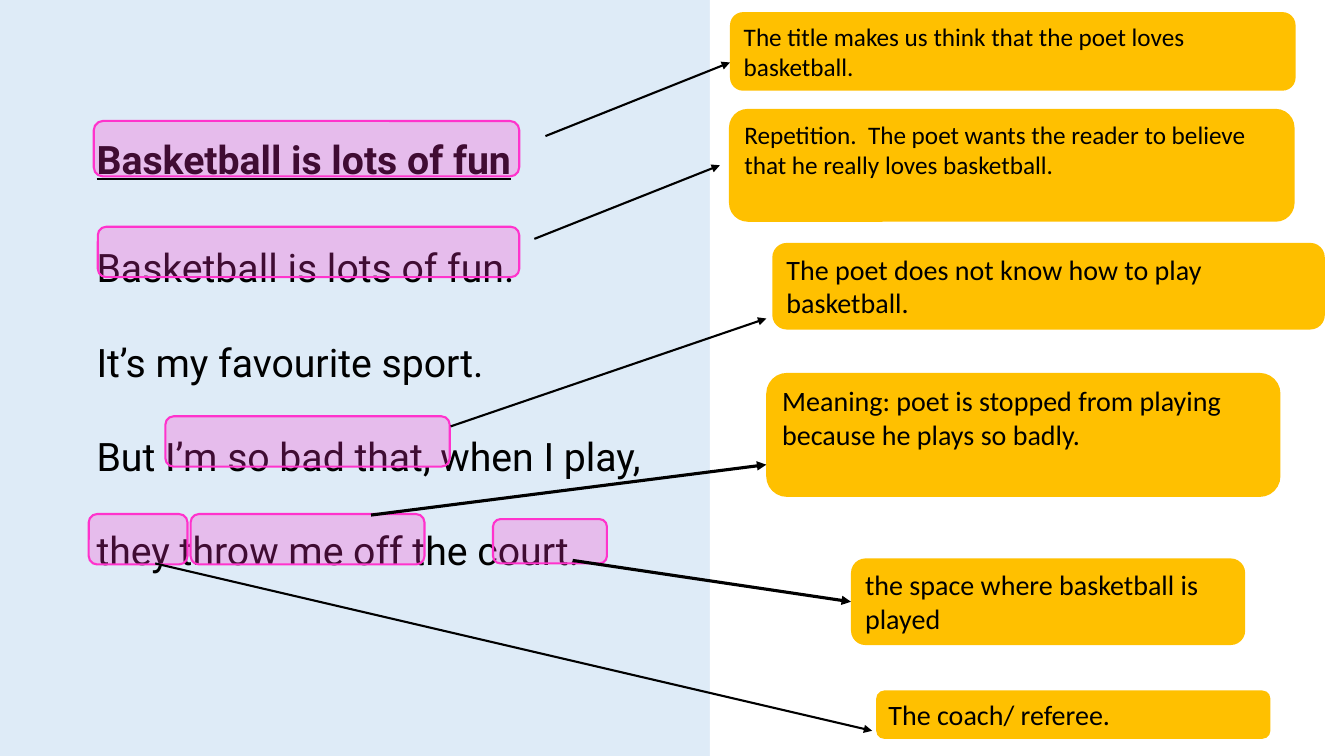
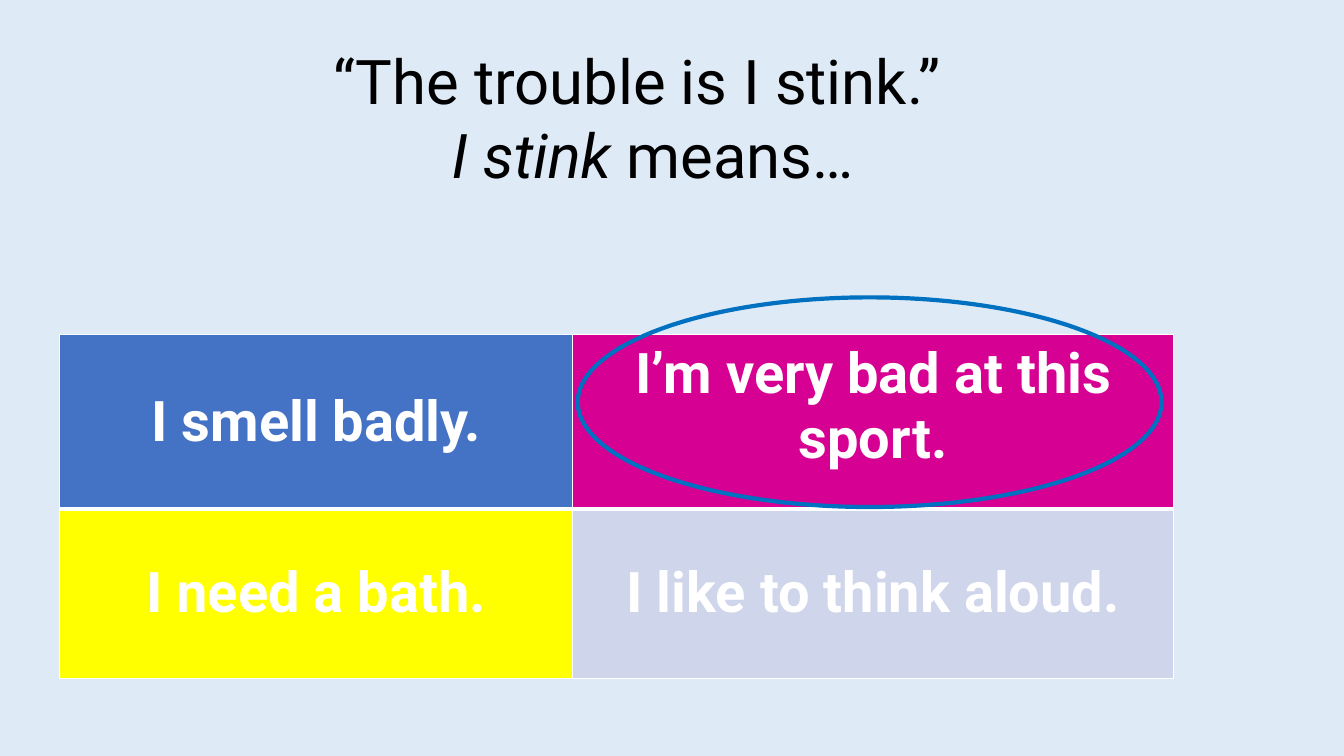
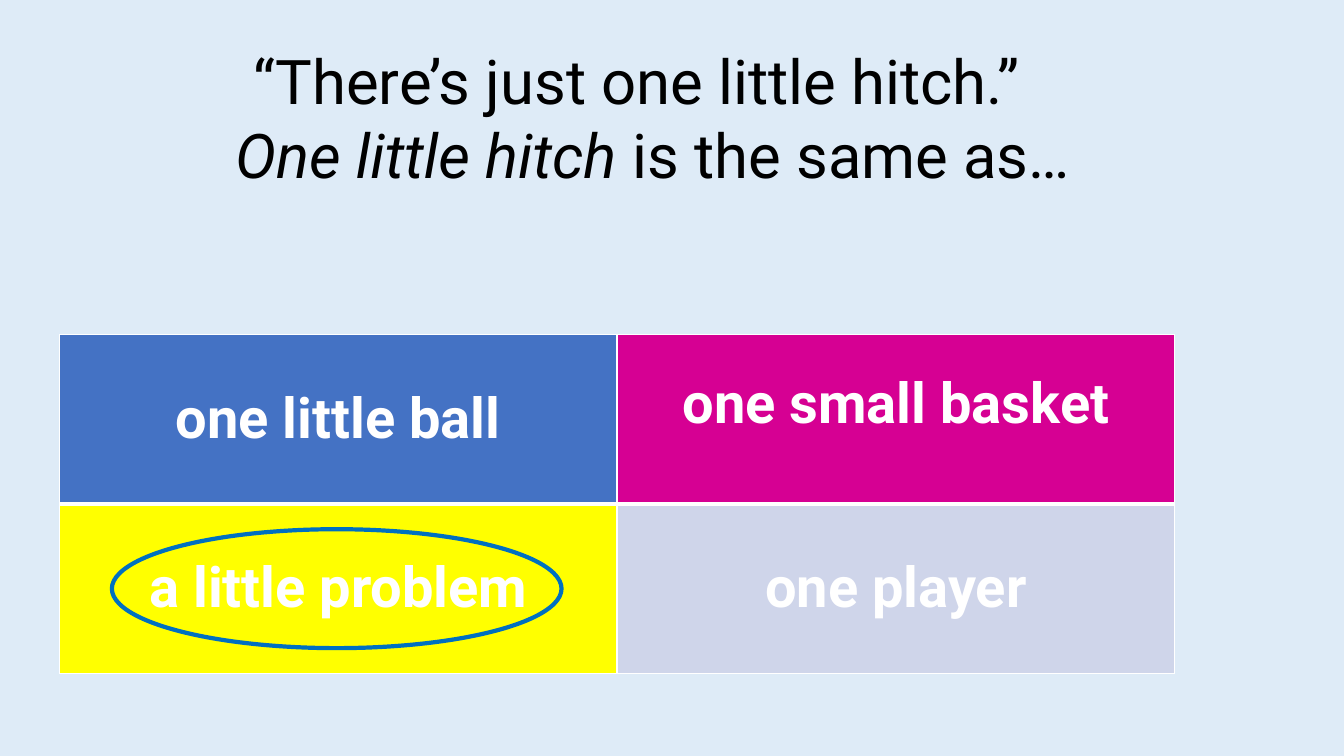
import pptx
import pptx.util
import pptx.dml.color
import pptx.enum.shapes
import pptx.enum.text
import pptx.oxml
import pptx.oxml.ns
from pptx.util import Inches

# Shared look
SKY, WHITE, BLACK = "DEEBF7", "FFFFFF", "000000"
GOLD, PINK, RING = "FFC000", "FF33CC", "0070C0"
ANSWER_FILLS = [["4472C4", "D60093"], ["FFFF00", "CFD5EA"]]
POEM_FONT, NOTE_FONT = "Roboto", "Calibri"
MSO = pptx.enum.shapes.MSO_SHAPE
ANCHOR = pptx.enum.text.MSO_ANCHOR
ALIGN = pptx.enum.text.PP_ALIGN

# Slide 1: left, top, width, height, size, text
CALLOUTS = {
    "title": (7.24, 0.12, 5.61, 0.78, 18,
              "The title makes us think that the poet loves basketball."),
    "repetition": (7.23, 1.08, 5.61, 1.12, 18,
                   "Repetition.  The poet wants the reader to believe "
                   "that he really loves basketball."),
    "bad": (7.66, 2.41, 5.48, 0.86, 20,
            "The poet does not know how to play basketball."),
    "throw": (7.6, 3.7, 5.1, 1.23, 20,
              "Meaning: poet is stopped from playing because he plays so badly."),
    "court": (8.44, 5.54, 3.91, 0.86, 20, "the space where basketball is played"),
    "they": (8.69, 6.85, 3.91, 0.48, 20, "The coach/ referee."),
}
HIGHLIGHTS = [
    (0.93, 1.2, 4.22, 0.55),
    (0.97, 2.25, 4.18, 0.5),
    (1.64, 4.13, 2.82, 0.5),
    (0.88, 5.1, 0.98, 0.5),
    (1.89, 5.1, 2.32, 0.5),
    (4.89, 5.15, 1.13, 0.44),
]
# Start x, y, end x, y, width
ARROWS = [
    (5.41, 1.35, 7.24, 0.62, 1.5),
    (5.3, 2.37, 7.14, 1.64, 1.5),
    (4.47, 4.23, 7.6, 3.16, 1.5),
    (3.68, 5.11, 7.6, 4.61, 2.25),
    (1.54, 5.59, 8.65, 7.25, 1.5),
]
COURT_ARROW = (5.68, 5.56, 8.44, 5.97, 2.25)
POEM_LINES = ["Basketball is lots of fun.", "It’s my favourite sport.",
              "But I’m so bad that, when I play,", "they throw me off the court."]


def rgb(color):
    return pptx.dml.color.RGBColor.from_string(color)


def add_run(p, text, size, font, color=BLACK, bold=False, italic=False, underline=False):
    r = p.add_run()
    r.text = text
    f = r.font
    f.name, f.size = font, pptx.util.Pt(size)
    f.bold, f.italic, f.underline = bold, italic, underline
    f.color.rgb = rgb(color)


def add_box(s, kind, at, fill=None, line=None, width=1.5, alpha=None):
    sp = s.shapes.add_shape(kind, *map(Inches, at))
    sp.shadow.inherit = False
    if fill:
        sp.fill.solid()
        sp.fill.fore_color.rgb = rgb(fill)
    else:
        sp.fill.background()
    if alpha:
        clr = sp.fill._xPr.find(".//" + pptx.oxml.ns.qn("a:srgbClr"))
        clr.append(pptx.oxml.parse_xml(
            f'<a:alpha {pptx.oxml.ns.nsdecls("a")} val="{alpha * 1000}"/>'))
    if line:
        sp.line.color.rgb = rgb(line)
        sp.line.width = pptx.util.Pt(width)
    else:
        sp.line.fill.background()
    return sp


def add_callout(s, left, top, width, height, size, text):
    sp = add_box(s, MSO.ROUNDED_RECTANGLE, (left, top, width, height), GOLD)
    tf = sp.text_frame
    tf.word_wrap = True
    tf.vertical_anchor = ANCHOR.TOP
    p = tf.paragraphs[0]
    p.alignment = ALIGN.LEFT
    add_run(p, text, size, NOTE_FONT)
    return sp


def add_arrow(s, x1, y1, x2, y2, width):
    cx = s.shapes.add_connector(pptx.enum.shapes.MSO_CONNECTOR.STRAIGHT,
                                *map(Inches, (x1, y1, x2, y2)))
    cx.line.color.rgb = rgb(BLACK)
    cx.line.width = pptx.util.Pt(width)
    ns = pptx.oxml.ns.nsdecls("a")
    cx.line._get_or_add_ln().append(
        pptx.oxml.parse_xml(f'<a:tailEnd {ns} type="triangle"/>'))
    cx._element.spPr.append(pptx.oxml.parse_xml(f"<a:effectLst {ns}/>"))
    return cx


def add_poem(s):
    tf = s.shapes.add_textbox(*map(Inches, (0.86, 0.83, 11.5, 5.84))).text_frame
    tf.word_wrap = True
    heading, verse = tf.paragraphs[0], tf.add_paragraph()
    for p in (heading, verse):
        p.line_spacing = 2.0
        p.space_before = pptx.util.Pt(10)
    add_run(heading, "Basketball is lots of fun", 28, POEM_FONT, bold=True, underline=True)
    for i, text in enumerate(POEM_LINES):
        if i:
            verse.add_line_break()
        add_run(verse, text, 28, POEM_FONT)


def set_borders(cell, top, bottom):
    tcPr = cell._tc.get_or_add_tcPr()
    for side, width in (("L", 1), ("R", 1), ("T", top), ("B", bottom)):
        tcPr.append(pptx.oxml.parse_xml(
            f'<a:ln{side} {pptx.oxml.ns.nsdecls("a")} w="{pptx.util.Pt(width)}">'
            f'<a:solidFill><a:srgbClr val="{WHITE}"/></a:solidFill></a:ln{side}>'))


def add_answers(s, answers, cols, rows):
    table = s.shapes.add_table(2, 2, *map(Inches, (0.59, 3.32, sum(cols), sum(rows)))).table
    for i in range(2):
        table.columns[i].width = Inches(cols[i])
        table.rows[i].height = Inches(rows[i])
    for i, row in enumerate(answers):
        for j, text in enumerate(row):
            cell = table.cell(i, j)
            set_borders(cell, top=(1, 3)[i], bottom=(3, 1)[i])
            cell.fill.solid()
            cell.fill.fore_color.rgb = rgb(ANSWER_FILLS[i][j])
            cell.vertical_anchor = ANCHOR.MIDDLE
            p = cell.text_frame.paragraphs[0]
            p.alignment = ALIGN.CENTER
            add_run(p, text, 40, POEM_FONT, WHITE, bold=True)
    # The top right answer sits a little above the middle
    table.cell(0, 1).margin_bottom = Inches(0.35)


def add_question(s, quote, phrase, ending):
    title = s.shapes.title
    title.left, title.top, title.width, title.height = map(Inches, (-0.38, 0.38, 13.71, 1.58))
    tf = title.text_frame
    tf.word_wrap = True
    tf.auto_size = pptx.enum.text.MSO_AUTO_SIZE.NONE
    tf.vertical_anchor = ANCHOR.TOP
    first, second = tf.paragraphs[0], tf.add_paragraph()
    first.alignment = second.alignment = ALIGN.CENTER
    add_run(first, quote, 44, POEM_FONT)
    add_run(second, phrase, 44, POEM_FONT, italic=True)
    add_run(second, ending, 44, POEM_FONT)


def build_poem_slide(prs):
    s = prs.slides.add_slide(prs.slide_layouts[6])
    add_poem(s)
    add_box(s, MSO.RECTANGLE, (7.04, 0, 6.29, 7.5), WHITE)
    callouts = {name: add_callout(s, *spec_row) for name, spec_row in CALLOUTS.items()}
    for at in HIGHLIGHTS:
        add_box(s, MSO.ROUNDED_RECTANGLE, at, PINK, PINK, alpha=25)
    for arrow in ARROWS:
        add_arrow(s, *arrow)
    add_arrow(s, *COURT_ARROW).end_connect(callouts["court"], 1)


def build_quiz_slide(prs, question, answers, cols, rows, ring):
    s = prs.slides.add_slide(prs.slide_layouts[5])
    add_question(s, *question)
    add_answers(s, answers, cols, rows)
    add_box(s, MSO.OVAL, ring, line=RING, width=3)


def main():
    prs = pptx.Presentation()
    prs.slide_width, prs.slide_height = Inches(13.33), Inches(7.5)
    background = prs.slide_master.background.fill
    background.solid()
    background.fore_color.rgb = rgb(SKY)

    build_poem_slide(prs)
    build_quiz_slide(
        prs, ("“The trouble is I stink.”  ", "I stink ", "means…"),
        [["I smell badly.", "I’m very bad at this sport."],
         ["I need a bath.", "I like to think aloud."]],
        cols=(5.09, 5.96), rows=(1.73, 1.68), ring=(5.73, 2.95, 5.79, 2.08))
    build_quiz_slide(
        prs, ("“There’s just one little hitch.”  ", "One little hitch ", "is the same as…"),
        [["one little ball", "one small basket"],
         ["a little problem", "one player"]],
        cols=(5.53, 5.53), rows=(1.68, 1.68), ring=(1.11, 5.25, 4.46, 1.18))
    prs.save("out.pptx")


if __name__ == "__main__":
    main()
